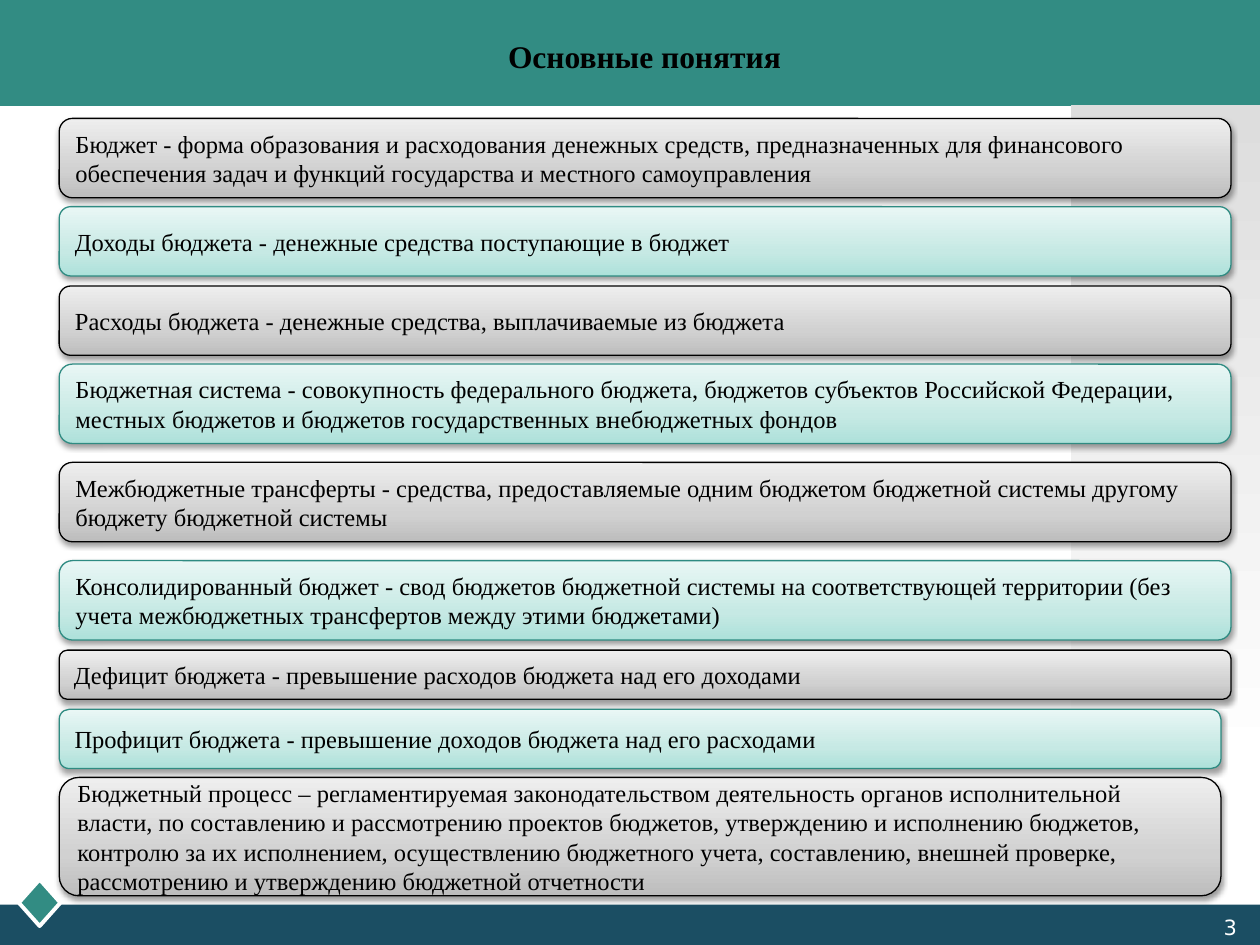
from pptx import Presentation
from pptx.dml.color import RGBColor
from pptx.enum.shapes import MSO_SHAPE
from pptx.enum.text import MSO_ANCHOR, PP_ALIGN
from pptx.oxml import parse_xml
from pptx.oxml.ns import nsdecls, qn
from pptx.util import Inches, Pt

RECT, ROUNDED, DIAMOND = MSO_SHAPE.RECTANGLE, MSO_SHAPE.ROUNDED_RECTANGLE, MSO_SHAPE.DIAMOND
MIDDLE, LEFT, CENTER = MSO_ANCHOR.MIDDLE, PP_ALIGN.LEFT, PP_ALIGN.CENTER

BLACK = RGBColor(0x00, 0x00, 0x00)
WHITE = RGBColor(0xFF, 0xFF, 0xFF)
GREEN = RGBColor(0x32, 0x8C, 0x83)
NAVY = RGBColor(0x1B, 0x4E, 0x63)
TEAL_LINE = RGBColor(0x2F, 0x8B, 0x82)
PANEL_STOPS = [(0, RGBColor(0xDD, 0xDD, 0xDD)), (100, WHITE)]
GRAY_STOPS = [(0, RGBColor(0xBD, 0xBD, 0xBD)), (35, RGBColor(0xD1, 0xD1, 0xD1)),
              (100, RGBColor(0xEE, 0xEE, 0xEE))]
TEAL_STOPS = [(0, RGBColor(0xAD, 0xE1, 0xDA)), (35, RGBColor(0xC6, 0xE9, 0xE4)),
              (100, RGBColor(0xE9, 0xF7, 0xF5))]
SERIF = "Times New Roman"


def set_gradient(sp, stops, angle):
    gs = "".join(f'<a:gs pos="{pos * 1000}"><a:srgbClr val="{color}"/></a:gs>'
                 for pos, color in stops)
    fill = parse_xml(f'<a:gradFill {nsdecls("a")} rotWithShape="1"><a:gsLst>{gs}</a:gsLst>'
                     f'<a:lin ang="{angle * 60000}" scaled="0"/></a:gradFill>')
    sp._element.spPr.find(qn("a:prstGeom")).addnext(fill)


def set_text(sp, text, font, size, color, align, bold=False):
    p = sp.text_frame.paragraphs[0]
    p.text = text
    p.alignment = align
    f = p.runs[0].font
    f.name, f.size, f.bold = font, Pt(size), bold
    f.color.rgb = color


prs = Presentation()
prs.slide_width, prs.slide_height = Inches(10), Inches(7.5)
s = prs.slides.add_slide(prs.slide_layouts[5])
shapes = s.shapes

# Header and footer bands, corner diamond
decor = [
    (RECT, 0, 0, 10, 0.84, GREEN),
    (RECT, 0, 7.18, 10, 0.33, NAVY),
    (DIAMOND, 0.15, 6.98, 0.33, 0.37, GREEN),
]
for kind, x, y, w, h, color in decor:
    sp = shapes.add_shape(kind, Inches(x), Inches(y), Inches(w), Inches(h))
    sp.shadow.inherit = False
    sp.fill.solid()
    sp.fill.fore_color.rgb = color
    sp.line.fill.background()
    if kind == DIAMOND:
        sp.line.color.rgb = WHITE
        sp.line.width = Pt(2.25)

# Side panel
panel = shapes.add_shape(RECT, Inches(8.5), Inches(0.83), Inches(1.5), Inches(5.25))
panel.shadow.inherit = False
panel.line.fill.background()
set_gradient(panel, PANEL_STOPS, 90)

# Page number
number = shapes.add_textbox(Inches(9.51), Inches(7.21), Inches(0.51), Inches(0.4))
number.text_frame.word_wrap = True
set_text(number, "3", "DejaVu Sans", 12, WHITE, CENTER)

# Title, brought in front of the header band
title = shapes.title
title.left, title.top = Inches(0.49), Inches(0.04)
title.width, title.height = Inches(9.25), Inches(0.81)
title.text_frame.vertical_anchor = MIDDLE
set_text(title, "Основные понятия", SERIF, 18, BLACK, CENTER, True)
shapes._spTree.append(title._element)

# Definitions: top, width, height, text; gray and teal alternate
definitions = [
    (0.94, 9.3, 0.63, "Бюджет - форма образования и расходования денежных средств, предназначенных "
     "для финансового обеспечения задач и функций государства и местного самоуправления"),
    (1.64, 9.3, 0.55, "Доходы бюджета - денежные средства поступающие в бюджет"),
    (2.27, 9.3, 0.55, "Расходы бюджета - денежные средства, выплачиваемые из бюджета"),
    (2.89, 9.3, 0.63, "Бюджетная система - совокупность федерального бюджета, бюджетов субъектов "
     "Российской Федерации, местных бюджетов и бюджетов государственных внебюджетных фондов"),
    (3.67, 9.3, 0.63, "Межбюджетные трансферты - средства, предоставляемые одним бюджетом "
     "бюджетной системы другому бюджету бюджетной системы"),
    (4.45, 9.3, 0.63, "Консолидированный бюджет - свод бюджетов бюджетной системы на "
     "соответствующей территории (без учета межбюджетных трансфертов между этими бюджетами)"),
    (5.16, 9.3, 0.39, "Дефицит бюджета - превышение расходов бюджета над его доходами"),
    (5.63, 9.22, 0.47, "Профицит бюджета - превышение доходов бюджета над его расходами"),
    (6.17, 9.22, 0.94, "Бюджетный процесс – регламентируемая законодательством деятельность "
     "органов исполнительной власти, по составлению и рассмотрению проектов бюджетов, "
     "утверждению и исполнению бюджетов, контролю за их исполнением, осуществлению бюджетного "
     "учета, составлению, внешней проверке, рассмотрению и утверждению бюджетной отчетности"),
]
styles = [(GRAY_STOPS, BLACK), (TEAL_STOPS, TEAL_LINE)]
for i, (top, width, height, text) in enumerate(definitions):
    stops, line_color = styles[i % 2]
    sp = shapes.add_shape(ROUNDED, Inches(0.47), Inches(top), Inches(width), Inches(height))
    set_gradient(sp, stops, 270)
    sp.line.color.rgb = line_color
    sp.line.width = Pt(0.75)
    sp.shadow.inherit = False
    sp._element.spPr.find(qn("a:effectLst")).append(parse_xml(
        f'<a:outerShdw {nsdecls("a")} blurRad="{Pt(3.1)}" dist="{Pt(1.6)}" dir="5400000" '
        'rotWithShape="0"><a:srgbClr val="000000"><a:alpha val="38000"/></a:srgbClr>'
        '</a:outerShdw>'))
    sp.text_frame.word_wrap = True
    sp.text_frame.vertical_anchor = MIDDLE
    set_text(sp, text, SERIF, 14, BLACK, LEFT)

prs.save("out.pptx")
